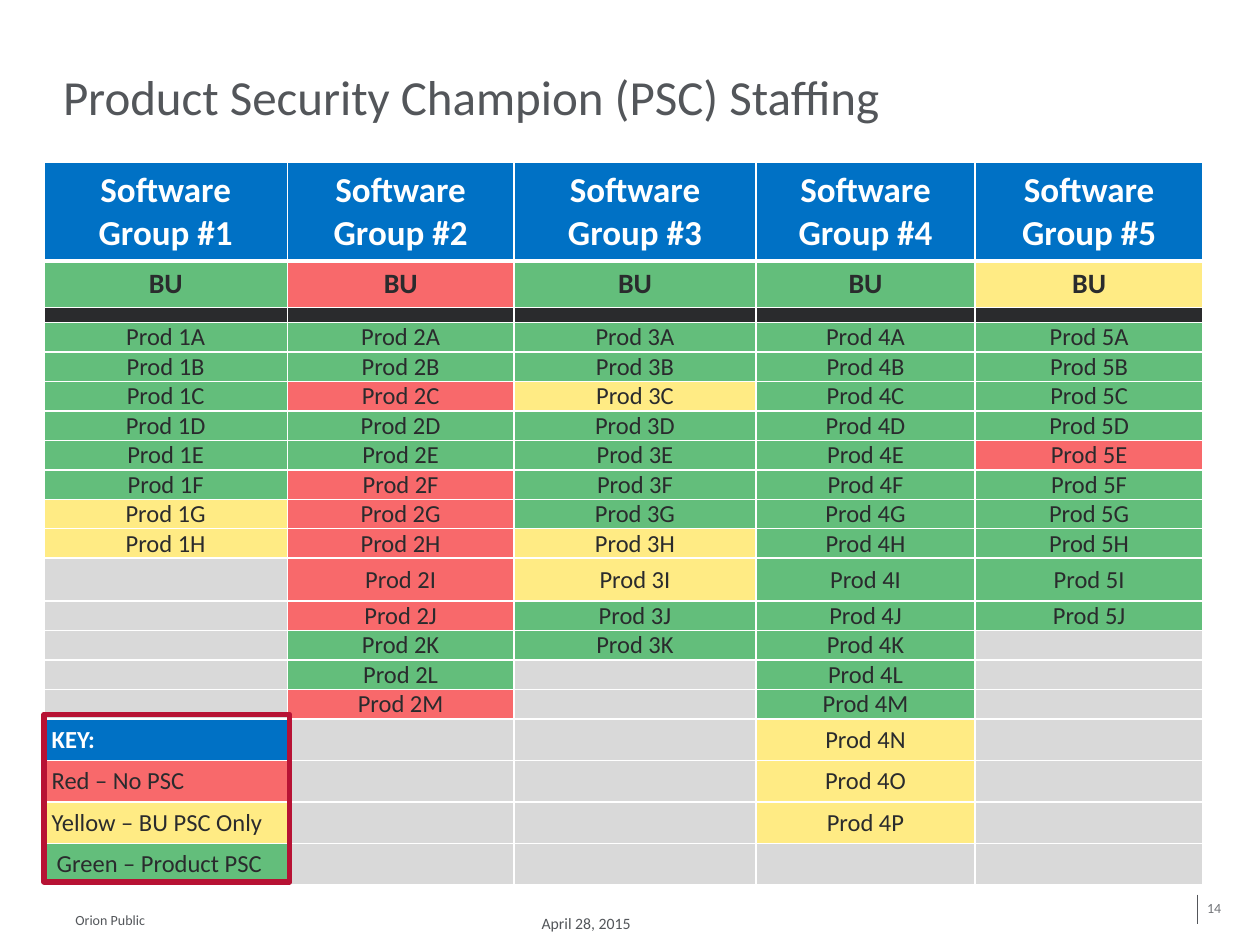
from lxml import etree
from pptx import Presentation
from pptx import util as u
from pptx.dml.color import RGBColor
from pptx.enum import shapes, text
from pptx.oxml.ns import qn

BLUE = RGBColor(0x00, 0x71, 0xC5)
GREEN = RGBColor(0x63, 0xBE, 0x7B)
RED = RGBColor(0xF8, 0x69, 0x6B)
YELLOW = RGBColor(0xFF, 0xEB, 0x84)
GRAY = RGBColor(0xD9, 0xD9, 0xD9)
INK = RGBColor(0x2A, 0x2B, 0x2D)
WHITE = RGBColor(0xFF, 0xFF, 0xFF)
SLATE = RGBColor(0x53, 0x56, 0x5A)
NUMBER_GRAY = RGBColor(0x72, 0x74, 0x78)
CRIMSON = RGBColor(0xB7, 0x12, 0x34)

STATUS = {"G": GREEN, "R": RED, "Y": YELLOW}
BU_STATUS = "GRGGY"
PRODUCT_STATUS = [
    "GGGGGGYY",
    "GGRGGRRRRRGGR",
    "GGYGGGGYYGG",
    "GGGGGGGGGGGGGYYY",
    "GGGGRGGGGG",
]
KEY = [
    ("KEY:", BLUE, WHITE, True, 0.06),
    ("Red – No PSC", RED, INK, False, 0.06),
    ("Yellow – BU PSC Only", YELLOW, INK, False, 0.06),
    ("Green – Product PSC", GREEN, INK, False, 0.1),
]
COLUMN_WIDTHS = [1.93, 1.8, 1.92, 1.74, 1.81]
ROW_HEIGHTS = [0.78, 0.37, 0.12] + [0.23] * 8 + [0.34] + [0.23] * 4 + [0.33] * 4
FIRST_PRODUCT_ROW = 3
FIRST_KEY_ROW = 16
CENTER = text.PP_ALIGN.CENTER
LEFT = text.PP_ALIGN.LEFT
MIDDLE = text.MSO_ANCHOR.MIDDLE
TOP = text.MSO_ANCHOR.TOP


class SlideBuilder:
    font_name = "Calibri"

    def __init__(self, slide):
        self.slide = slide

    def style(self, paragraph, size, color, bold=False, align=LEFT, spacing=None):
        paragraph.alignment = align
        if spacing:
            paragraph.line_spacing = spacing
        font = paragraph.font
        font.name, font.size, font.bold = self.font_name, u.Pt(size), bold
        font.color.rgb = color

    def fill_frame(self, frame, words, size, color, inset, anchor, spacing):
        frame.word_wrap = True
        frame.vertical_anchor = anchor
        frame.margin_left = frame.margin_right = u.Inches(inset)
        frame.margin_top = frame.margin_bottom = u.Inches(inset / 2)
        frame.text = words
        self.style(frame.paragraphs[0], size, color, spacing=spacing)

    def title(self, words, left, top, width, height):
        title = self.slide.shapes.title
        title.left, title.top = u.Inches(left), u.Inches(top)
        title.width, title.height = u.Inches(width), u.Inches(height)
        self.fill_frame(title.text_frame, words, 28, SLATE, 0, text.MSO_ANCHOR.BOTTOM, 0.9)

    def label(self, words, left, top, width, height, size, color=SLATE,
              inset=0.1, anchor=TOP, spacing=None):
        box = self.slide.shapes.add_textbox(*map(u.Inches, (left, top, width, height)))
        self.fill_frame(box.text_frame, words, size, color, inset, anchor, spacing)

    def line(self, x1, y1, x2, y2, color, width):
        line = self.slide.shapes.add_connector(
            shapes.MSO_CONNECTOR.STRAIGHT, *map(u.Inches, (x1, y1, x2, y2)))
        line.line.color.rgb = color
        line.line.width = u.Pt(width)
        etree.SubElement(line._element.spPr, qn("a:effectLst"))

    def outline(self, left, top, width, height, color, weight):
        shape = self.slide.shapes.add_shape(
            shapes.MSO_SHAPE.RECTANGLE, *map(u.Inches, (left, top, width, height)))
        shape.shadow.inherit = False
        shape.fill.background()
        shape.line.color.rgb = color
        shape.line.width = u.Pt(weight)

    def table(self, left, top, widths, heights):
        frame = self.slide.shapes.add_table(
            len(heights), len(widths), u.Inches(left), u.Inches(top),
            u.Inches(sum(widths)), u.Inches(sum(heights)))
        table = frame.table
        table.first_row = table.horz_banding = False
        for column, width in zip(table.columns, widths):
            column.width = u.Inches(width)
        for row, height in zip(table.rows, heights):
            row.height = u.Inches(height)
        return table

    def borders(self, cell, top, bottom):
        properties = cell._tc.get_or_add_tcPr()
        edges = {"a:lnL": 1, "a:lnR": 1, "a:lnT": top, "a:lnB": bottom}
        for index, (tag, width) in enumerate(edges.items()):
            edge = etree.Element(qn(tag), w=str(u.Pt(width)))
            fill = etree.SubElement(edge, qn("a:solidFill"))
            etree.SubElement(fill, qn("a:srgbClr"), val=str(WHITE))
            properties.insert(index, edge)

    def cell(self, cell, words, fill, size=14, color=INK, bold=False, align=CENTER,
             inset=0.06, pad=0, anchor=MIDDLE, top=1, bottom=1):
        cell.fill.solid()
        cell.fill.fore_color.rgb = fill
        self.borders(cell, top, bottom)
        cell.vertical_anchor = anchor
        cell.margin_left = cell.margin_right = u.Inches(inset)
        cell.margin_top = cell.margin_bottom = u.Inches(pad)
        paragraph = cell.text_frame.paragraphs[0]
        if words:
            cell.text = words
        else:
            etree.SubElement(paragraph._p, qn("a:endParaRPr"), sz=str(size * 100))
        self.style(cell.text_frame.paragraphs[0], size, color, bold, align)


def fill_staffing_table(builder, table):
    for column, statuses in enumerate(PRODUCT_STATUS):
        group = column + 1
        builder.cell(table.cell(0, column), f"Software Group #{group}", BLUE, 20, WHITE,
                     True, inset=0.1, pad=0.05, anchor=TOP, bottom=3)
        builder.cell(table.cell(1, column), "BU", STATUS[BU_STATUS[column]], 16,
                     bold=True, pad=0.05, top=3)
        builder.cell(table.cell(2, column), "", INK, 5)
        for row in range(FIRST_PRODUCT_ROW, len(ROW_HEIGHTS)):
            product = row - FIRST_PRODUCT_ROW
            cell = table.cell(row, column)
            if product < len(statuses):
                letter = chr(ord("A") + product)
                builder.cell(cell, f"Prod {group}{letter}", STATUS[statuses[product]])
            elif column or row < FIRST_KEY_ROW:
                builder.cell(cell, "", GRAY, 10)
    for row, (words, fill, color, bold, inset) in enumerate(KEY, FIRST_KEY_ROW):
        builder.cell(table.cell(row, 0), words, fill, color=color, bold=bold,
                     align=LEFT, inset=inset)


def main():
    presentation = Presentation()
    presentation.slide_width, presentation.slide_height = u.Inches(10), u.Inches(7.5)
    builder = SlideBuilder(presentation.slides.add_slide(presentation.slide_layouts[5]))
    builder.line(9.5, 7.1, 9.5, 7.33, SLATE, 0.5)
    builder.label("14", 9.58, 7.1, 0.25, 0.23, 8, NUMBER_GRAY, 0, MIDDLE, 0.9)
    builder.title("Product Security Champion (PSC) Staffing", 0.5, 0.2, 9, 0.8)
    table = builder.table(0.35, 1.29, COLUMN_WIDTHS, ROW_HEIGHTS)
    fill_staffing_table(builder, table)
    builder.outline(0.35, 5.67, 1.95, 1.33, CRIMSON, 3)
    builder.label("Orion Public", 0.5, 7.2, 3.64, 0.2, 8, spacing=0.9)
    builder.label("April 28, 2015", 4.2, 7.2, 1.77, 0.24, 9)
    presentation.save("out.pptx")


if __name__ == "__main__":
    main()
